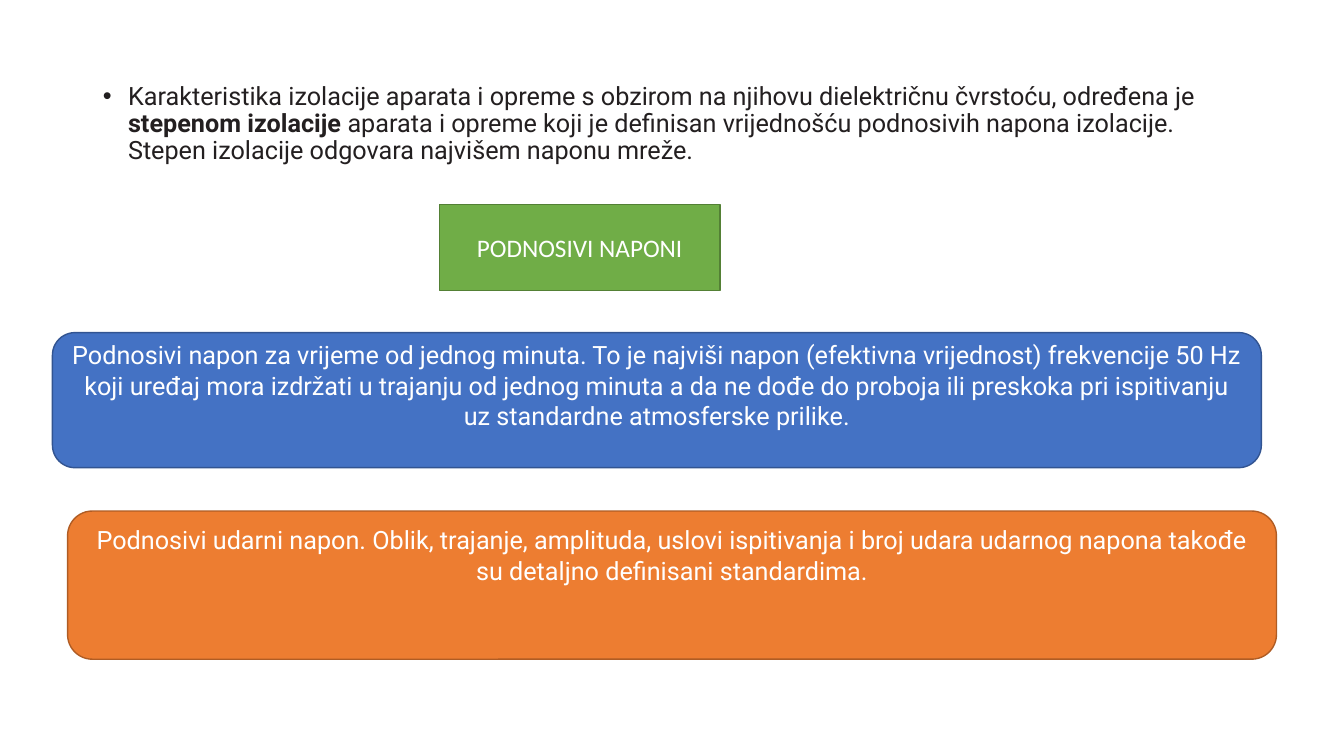
from lxml import etree
from pptx import Presentation
from pptx.dml.color import RGBColor
from pptx.enum.shapes import MSO_SHAPE
from pptx.enum.text import MSO_ANCHOR, MSO_AUTO_SIZE, PP_ALIGN
from pptx.oxml.ns import qn
from pptx.util import Inches, Pt

INK = RGBColor(0x23, 0x1F, 0x20)
WHITE = RGBColor(0xFF, 0xFF, 0xFF)
GREEN = RGBColor(0x70, 0xAD, 0x47)
DARK_GREEN = RGBColor(0x53, 0x80, 0x35)
BLUE = RGBColor(0x44, 0x72, 0xC4)
DARK_BLUE = RGBColor(0x32, 0x54, 0x91)
ORANGE = RGBColor(0xED, 0x7D, 0x31)
DARK_ORANGE = RGBColor(0xAF, 0x5C, 0x24)


def add_text(p, text, font="Roboto", size=18, color=WHITE, bold=False):
    r = p.add_run()
    r.text = text
    r.font.name = font
    r.font.size = Pt(size)
    r.font.bold = bold
    r.font.color.rgb = color


class SlideBuilder:
    """Holds the current slide and the style shared by its elements."""

    line_width = Pt(1)
    inset = 0.05

    def __init__(self, prs):
        self.s = prs.slides.add_slide(prs.slide_layouts[1])
        title = self.s.shapes.title.element
        title.getparent().remove(title)

    def body(self, x, y, w, h, runs):
        """Place the body placeholder with one bulleted paragraph of (text, bold) runs."""
        sp = self.s.placeholders[1]
        sp.left, sp.top, sp.width, sp.height = map(Inches, (x, y, w, h))
        tf = sp.text_frame
        tf.auto_size = MSO_AUTO_SIZE.NONE
        p = tf.paragraphs[0]
        p.line_spacing = 0.9
        p.space_before = Pt(10)
        for text, bold in runs:
            add_text(p, text, color=INK, bold=bold)
        props = p._p.get_or_add_pPr()
        props.set("marL", str(Inches(0.25)))
        props.set("indent", str(Inches(-0.25)))
        etree.SubElement(props, qn("a:buFont")).set("typeface", "Arial")
        etree.SubElement(props, qn("a:buChar")).set("char", "•")

    def box(self, kind, x, y, w, h, fill, line, text, font="Roboto", space_below=0):
        """Add a filled box; space_below lifts its centred text."""
        sp = self.s.shapes.add_shape(kind, *map(Inches, (x, y, w, h)))
        sp.shadow.inherit = False
        sp.fill.solid()
        sp.fill.fore_color.rgb = fill
        sp.line.color.rgb = line
        sp.line.width = self.line_width
        tf = sp.text_frame
        tf.word_wrap = True
        tf.vertical_anchor = MSO_ANCHOR.MIDDLE
        tf.margin_bottom = Inches(self.inset + space_below)
        p = tf.paragraphs[0]
        p.alignment = PP_ALIGN.CENTER
        add_text(p, text, font=font)


def main():
    prs = Presentation()
    prs.slide_width, prs.slide_height = Inches(13.33), Inches(7.5)
    slide = SlideBuilder(prs)
    slide.body(0.92, 0.78, 11.5, 5.97, [
        ("Karakteristika izolacije aparata i opreme s obzirom na njihovu "
         "dielektričnu čvrstoću, određena je ", False),
        ("stepenom izolacije ", True),
        ("aparata i opreme koji je definisan vrijednošću podnosivih napona "
         "izolacije. Stepen izolacije odgovara najvišem naponu mreže.", False),
    ])
    slide.box(MSO_SHAPE.RECTANGLE, 4.36, 2.03, 2.78, 0.85, GREEN, DARK_GREEN,
              "PODNOSIVI NAPONI", font="Calibri")
    slide.box(MSO_SHAPE.ROUNDED_RECTANGLE, 0.52, 3.3, 11.99, 1.34, BLUE, DARK_BLUE,
              "Podnosivi napon za vrijeme od jednog minuta. To je najviši napon "
              "(efektivna vrijednost) frekvencije 50 Hz koji uređaj mora izdržati u "
              "trajanju od jednog minuta a da ne dođe do proboja ili preskoka pri "
              "ispitivanju uz standardne atmosferske prilike.", space_below=0.3)
    slide.box(MSO_SHAPE.ROUNDED_RECTANGLE, 0.67, 5.07, 11.99, 1.47, ORANGE, DARK_ORANGE,
              "Podnosivi udarni napon. Oblik, trajanje, amplituda, uslovi ispitivanja "
              "i broj udara udarnog napona takođe su detaljno definisani standardima.",
              space_below=0.6)
    prs.save("out.pptx")


if __name__ == "__main__":
    main()
